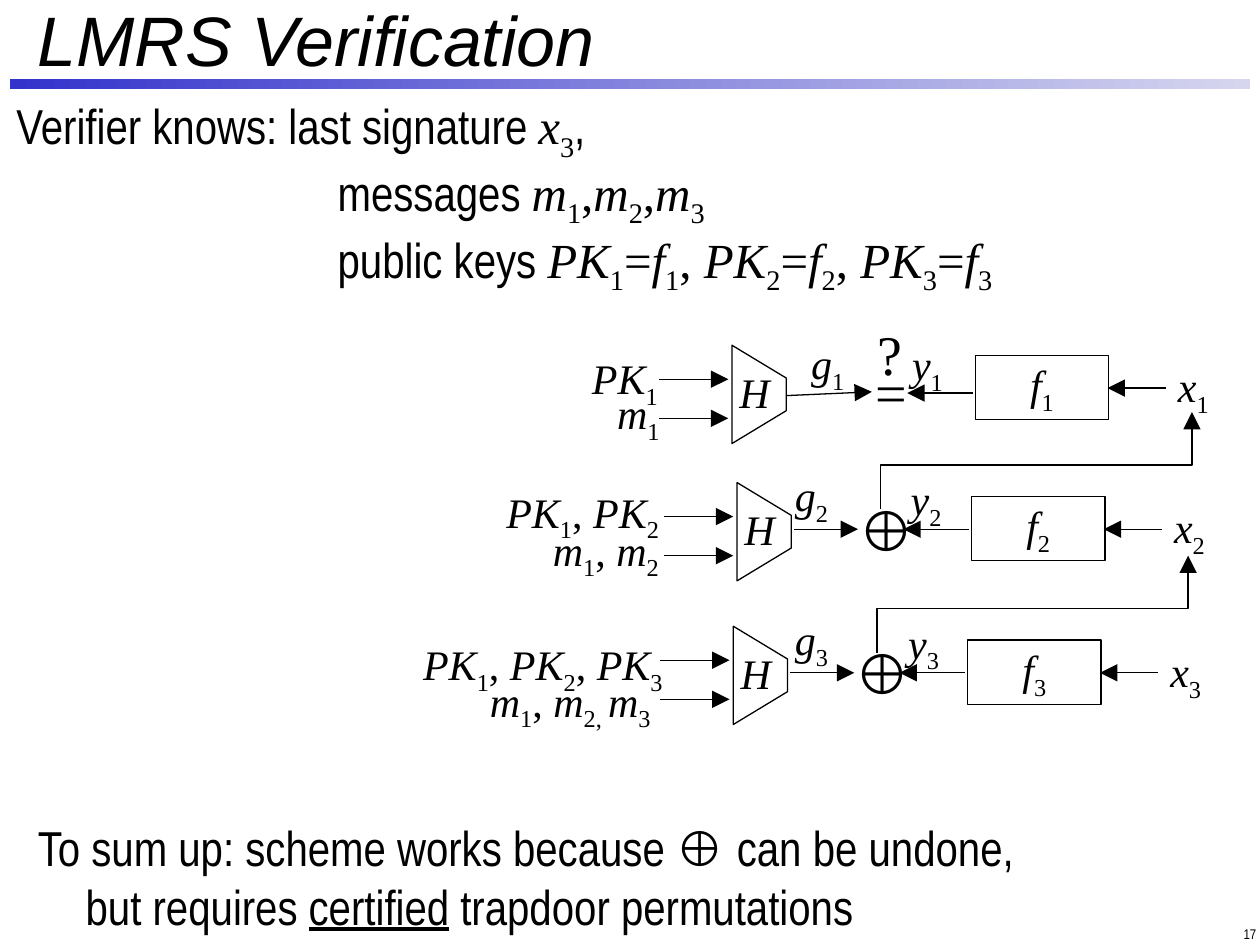
import itertools
import pptx
import pptx.util
import pptx.dml.color
import pptx.enum.shapes
import pptx.enum.text
import pptx.oxml
from pptx.oxml import ns

Inches, Pt = pptx.util.Inches, pptx.util.Pt
RGB = pptx.dml.color.RGBColor.from_string
ALIGN = pptx.enum.text.PP_ALIGN
ANCHOR = pptx.enum.text.MSO_ANCHOR
SHAPE = pptx.enum.shapes.MSO_SHAPE

THEME = dict(ink="000000", bar=("3333CC", "D6D6EF"), line=0.75,
             title=40, body=28, label=24, sign=32, page=8)
STYLES = {
    "head": dict(name="Arial", italic=True),
    "text": dict(name="Arial Narrow"),
    "under": dict(name="Arial Narrow", underline=True),
    "var": dict(name="Times New Roman", italic=True),
    "sub": dict(name="Times New Roman", italic=False),
    "plain": dict(name="Times New Roman", italic=False),
}


def kind(char):
    return "var" if char.isalpha() else "sub" if char.isdigit() else "plain"


def math(text):
    """Split a formula: letters italic, digits lowered, the rest upright."""
    return [(key, "".join(part)) for key, part in itertools.groupby(text, kind)]


TITLE = [("head", "LMRS Verification")]
# Each line: left margin, first-line indent, runs
KNOWN = [
    (0.38, -0.38, [("text", "Verifier knows: last signature "), *math("x3"), ("text", ",")]),
    (2.55, 0, [("text", "messages "), *math("m1,m2,m3")]),
    (2.55, 0, [("text", "public keys "), *math("PK1=f1, PK2=f2, PK3=f3")]),
]
SUMMARY = [
    (0.38, -0.38, [("text", "To sum up: scheme works because "), ("plain", "⊕ "),
                   ("text", "can be undone,")]),
    (0.38, 0, [("text", "but requires "), ("under", "certified"),
               ("text", " trapdoor permutations")]),
]
# hash and box: top-left corners; keys, msgs: corner, runs, width
# g, y: label corners; signs: operator texts with corners
# mix: arrow from hash to operator; back: height of the arrow from the box
ROWS = [
    dict(hash=(5.81, 2.74), box=(7.74, 2.82), keys=(4.6, 2.75, math("PK1"), 1.54),
         msgs=(4.8, 3.03, math("m1"), 0.57), g=(6.34, 2.63), y=(7.14, 2.64),
         signs=[("=", 6.88, 2.79), ("?", 6.87, 2.49)],
         mix=(6.24, 3.14, 6.92, 3.11), back=3.12),
    dict(hash=(5.85, 3.83), box=(7.71, 3.94), keys=(3.92, 3.81, math("PK1, PK2"), 1.54),
         msgs=(4.29, 4.11, math("m1, m2"), 1.2), g=(6.21, 3.68), y=(7.13, 3.71),
         signs=[("⊕", 6.81, 3.88)], mix=(6.3, 4.2, 6.81, 4.2), back=4.2),
    dict(hash=(5.82, 4.97), box=(7.68, 5.08),
         keys=(3.26, 5.02, math("PK1, PK2, PK3"), 2.2),
         msgs=(3.79, 5.31, math("m1, m2") + [("sub", ", ")] + math("m3"), 1.6),
         g=(6.21, 4.82), y=(7.11, 4.85),
         signs=[("⊕", 6.78, 5.02)], mix=(6.27, 5.34, 6.78, 5.34), back=5.34),
]

deck = pptx.Presentation()
deck.slide_width, deck.slide_height = Inches(10), Inches(7.5)
slide = deck.slides.add_slide(deck.slide_layouts[3])
shapes = slide.shapes


def write(para, runs, size):
    for style, text in runs:
        run = para.add_run()
        run.text = text
        for key, value in STYLES[style].items():
            setattr(run.font, key, value)
        run.font.size = Pt(size)
        run.font.color.rgb = RGB(THEME["ink"])
        if style == "sub":
            run.font._element.set("baseline", "-25000")


def place(shape, *at):
    for key, value in zip(("left", "top", "width", "height"), at):
        setattr(shape, key, Inches(value))


def label(x, y, runs, w=0.53, h=0.5, size="label", **form):
    box = shapes.add_textbox(*map(Inches, (x, y, w, h)))
    box.text_frame.word_wrap = False
    para = box.text_frame.paragraphs[0]
    for key, value in {"space_before": Pt(3), **form}.items():
        setattr(para, key, value)
    write(para, runs, THEME[size])
    return box


def lines(holder, at, rows):
    """Fill a body placeholder with unbulleted, indented lines."""
    place(holder, *at)
    frame = holder.text_frame
    frame.auto_size = pptx.enum.text.MSO_AUTO_SIZE.NONE
    for i, (left, first, runs) in enumerate(rows):
        para = frame.add_paragraph() if i else frame.paragraphs[0]
        para.space_before = Pt(0 if i else 2)
        props = para._p.get_or_add_pPr()
        props.set("marL", str(Inches(left)))
        props.set("indent", str(Inches(first)))
        props.append(pptx.oxml.parse_xml(f"<a:buNone {ns.nsdecls('a')}/>"))
        write(para, runs, THEME["body"])


def stroke(shape, end=None):
    shape.line.color.rgb = RGB(THEME["ink"])
    shape.line.width = Pt(THEME["line"])
    if end:
        shape.line._get_or_add_ln().append(pptx.oxml.parse_xml(
            f'<a:{end} {ns.nsdecls("a")} type="triangle" w="lg" len="lg"/>'))


def arrow(*ends):
    link = shapes.add_connector(pptx.enum.shapes.MSO_CONNECTOR.STRAIGHT, *map(Inches, ends))
    stroke(link, "tailEnd")
    link._element.spPr.append(pptx.oxml.parse_xml(f"<a:effectLst {ns.nsdecls('a')}/>"))


def outline(points, close=False, end=None):
    spots = [tuple(map(Inches, point)) for point in points]
    pen = shapes.build_freeform(*spots[0])
    pen.add_line_segments(spots[1:], close=close)
    shape = pen.convert_to_shape()
    shape.fill.background()
    shape.shadow.inherit = False
    stroke(shape, end)


def chain(num, row):
    """Draw one row: hash on the left, permutation on the right."""
    x, y = row["hash"]
    outline([(x, y), (x + 0.43, y + 0.26), (x + 0.43, y + 0.52), (x, y + 0.78)], close=True)
    label(x - 0.04, y + 0.12, math("H"))
    for drop in (0.27, 0.58):
        arrow(x - 0.58, y + drop, x - 0.03, y + drop)
    for name in ("keys", "msgs"):
        label(*row[name])
    for name in "gy":
        label(*row[name], math(f"{name}{num}"))
    for sign, left, top in row["signs"]:
        mark = label(left, top, math(sign), 0.38, 0.63, "sign", alignment=ALIGN.CENTER)
        mark.text_frame.margin_left = mark.text_frame.margin_right = 0
    arrow(*row["mix"])

    x, y = row["box"]
    box = shapes.add_shape(SHAPE.RECTANGLE, *map(Inches, (x, y, 1.06, 0.51)))
    box.fill.background()
    box.shadow.inherit = False
    stroke(box)
    box.text_frame.word_wrap = False
    para = box.text_frame.paragraphs[0]
    para.alignment = ALIGN.CENTER
    para.space_before = Pt(3)
    write(para, math(f"f{num}"), THEME["label"])
    arrow(x - 0.02, row["back"], x - 0.54, row["back"])
    arrow(x + 1.51, y + 0.26, x + 1.05, y + 0.26)
    label(x + 1.51, y, math(f"x{num}"), line_spacing=0.9)
    if num > 1:
        outline([(x + 1.75, y - 0.67), (x + 1.75, y - 0.25),
                 (x - 0.72, y - 0.25), (x - 0.72, y + 0.1)], end="headEnd")


bar = shapes.add_shape(SHAPE.RECTANGLE, *map(Inches, (0.08, 0.63, 9.84, 0.08)))
bar.shadow.inherit = False
bar.line.fill.background()
bar.fill.gradient()
bar.fill.gradient_angle = 0
for stop, color in zip(bar.fill.gradient_stops, THEME["bar"]):
    stop.color.rgb = RGB(color)

title, known, summary = slide.placeholders
place(title, 0.2, 0.07, 8.96, 0.47)
title.text_frame.vertical_anchor = ANCHOR.MIDDLE
title.text_frame.auto_size = pptx.enum.text.MSO_AUTO_SIZE.NONE
title.text_frame.paragraphs[0].alignment = ALIGN.LEFT
write(title.text_frame.paragraphs[0], TITLE, THEME["title"])
lines(known, (0.03, 0.71, 9.33, 0.65), KNOWN)
lines(summary, (0.2, 6.44, 9.33, 0.65), SUMMARY)
for num, row in enumerate(ROWS, 1):
    chain(num, row)
page = label(7.99, 7.16, [("text", "17")], 2.08, size="page",
             alignment=ALIGN.RIGHT, space_before=Pt(0))
page.text_frame.vertical_anchor = ANCHOR.MIDDLE

deck.save("out.pptx")
